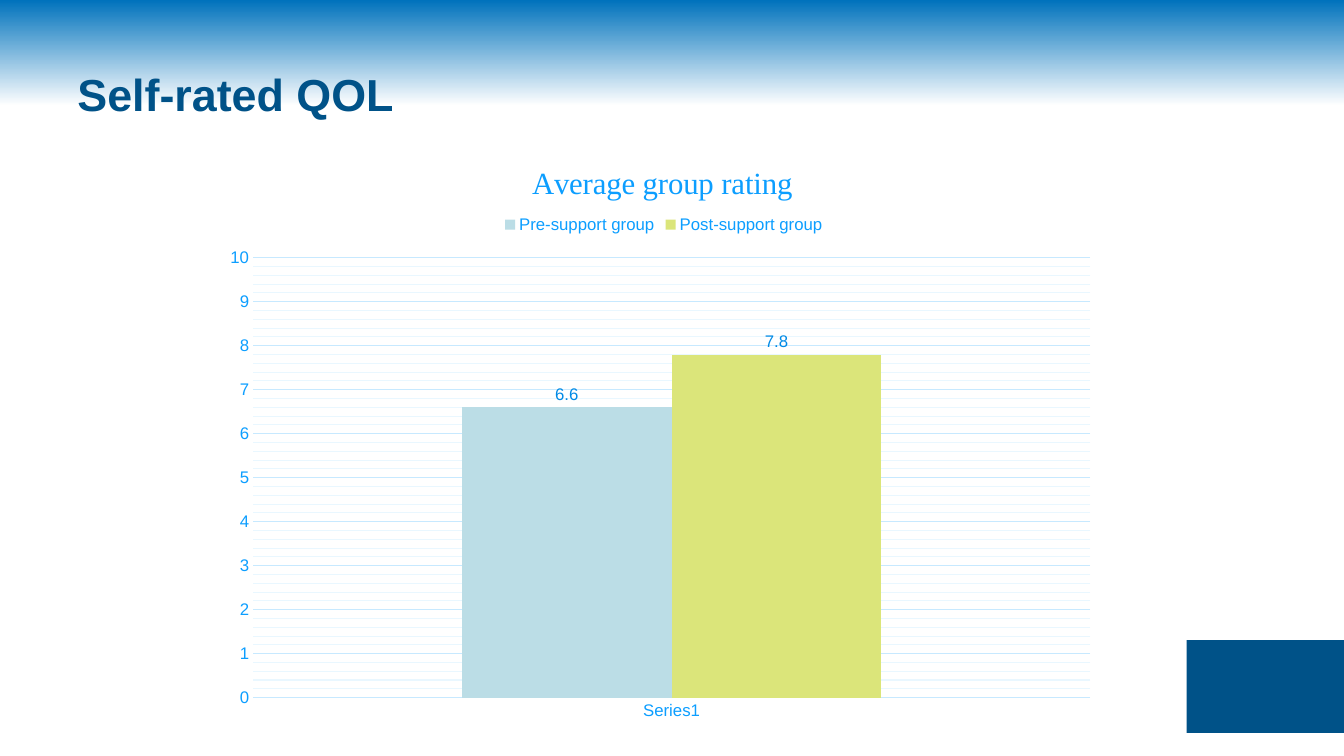
from lxml import etree
from pptx import Presentation
from pptx.chart.data import CategoryChartData
from pptx.dml.color import RGBColor
from pptx.enum.chart import XL_CHART_TYPE as ChartType, XL_LABEL_POSITION as LabelPosition
from pptx.enum.chart import XL_LEGEND_POSITION as LegendPosition, XL_TICK_MARK as TickMark
from pptx.enum.shapes import MSO_SHAPE as Shape
from pptx.enum.text import MSO_ANCHOR as Anchor
from pptx.oxml.ns import qn
from pptx.util import Inches, Pt

COLORS = {"navy": "005288", "sky": "0072BC", "white": "FFFFFF", "axis": "0C9EFF",
          "label": "008AE6", "grid": "C7E9FF", "minor": "E9F7FF",
          "pre": "BBDDE6", "post": "DBE57A"}
HEADING = "Self-rated QOL"
CHART_TITLE = "Average group rating"
CATEGORY = "Series1"
RATINGS = [("Pre-support group", 6.6, "pre"), ("Post-support group", 7.8, "post")]
GRADIENT = [(0, "sky"), (0.14, "white")]
BOXES = {"corner": (11.77, 6.35, 1.56, 0.92), "heading": (0.67, 0.3, 12, 1.25),
         "chart": (2.11, 1.33, 8.89, 5.93)}
FONTS = {"heading": {"name": "Arial", "size": Pt(32), "bold": True},
         "title": {"name": "Times New Roman", "size": Pt(22), "bold": False},
         "body": {"name": "Arial", "size": Pt(12), "bold": False}}
VALUE_AXIS = {"minimum_scale": 0, "maximum_scale": 10, "major_unit": 1, "minor_unit": 0.2,
              "has_major_gridlines": True, "has_minor_gridlines": True}
PLOT_AREA = {"x": 0.045, "y": 0.207, "w": 0.934, "h": 0.736}
TITLE_SPOT = {"x": 0.35, "y": 0.04}
LEGEND_SPOT = {"x": 0.32, "y": 0.13}


def color(name):
    """Return the named colour."""
    return RGBColor.from_string(COLORS[name])


def place(name):
    """Return the left, top, width and height of a named box."""
    return [Inches(length) for length in BOXES[name]]


def apply(target, values):
    """Set every attribute in a dict of format values."""
    for key, value in values.items():
        setattr(target, key, value)


def style(font, kind, shade):
    """Give a font its format and colour."""
    apply(font, FONTS[kind])
    font.color.rgb = color(shade)


def rule(line, shade):
    """Give a chart line its colour and width."""
    line.color.rgb = color(shade)
    line.width = Pt(0.75)


def set_layout(element, spot, before, inner=False):
    """Fix the place of a chart part ahead of the first of the given tags."""
    for old in element.findall(qn("c:layout")):
        element.remove(old)
    layout = etree.Element(qn("c:layout"))
    manual = etree.SubElement(layout, qn("c:manualLayout"))
    values = {"layoutTarget": "inner"} if inner else {}
    values.update({f"{key}Mode": "edge" for key in ("x", "y")})
    values.update(spot)
    for tag, value in values.items():
        etree.SubElement(manual, qn(f"c:{tag}")).set("val", str(value))
    follower = next(child for child in element if child.tag in [qn(tag) for tag in before])
    follower.addprevious(layout)


def add_background(page):
    """Fade the top of the page from blue to white."""
    fill = page.background.fill
    fill.gradient()
    fill.gradient_angle = 270
    for stop, (position, shade) in zip(fill.gradient_stops, GRADIENT):
        stop.position = position
        stop.color.rgb = color(shade)


def add_corner(page):
    """Add the dark block at the lower right."""
    block = page.shapes.add_shape(Shape.RECTANGLE, *place("corner"))
    block.shadow.inherit = False
    block.fill.solid()
    block.fill.fore_color.rgb = color("navy")
    block.line.fill.background()


def add_heading(page):
    """Add the page heading."""
    frame = page.shapes.add_textbox(*place("heading")).text_frame
    apply(frame, {"word_wrap": True, "vertical_anchor": Anchor.MIDDLE})
    span = frame.paragraphs[0].add_run()
    span.text = HEADING
    style(span.font, "heading", "navy")


def add_ratings(page):
    """Add the column chart of ratings."""
    data = CategoryChartData()
    data.categories = [CATEGORY]
    for name, value, _ in RATINGS:
        data.add_series(name, [value])
    chart = page.shapes.add_chart(ChartType.COLUMN_CLUSTERED, *place("chart"), data).chart
    style(chart.font, "body", "axis")
    title = chart.chart_title
    span = title.text_frame.paragraphs[0].add_run()
    span.text = CHART_TITLE
    style(span.font, "title", "axis")
    title.include_in_layout = False
    chart.has_legend = True
    apply(chart.legend, {"position": LegendPosition.TOP, "include_in_layout": False})
    style(chart.legend.font, "body", "axis")

    plot = chart.plots[0]
    apply(plot, {"gap_width": 199, "overlap": 0, "vary_by_categories": False})
    for series, (_, _, shade) in zip(plot.series, RATINGS):
        series.format.fill.solid()
        series.format.fill.fore_color.rgb = color(shade)
        labels = series.data_labels
        apply(labels, {"show_value": True, "position": LabelPosition.OUTSIDE_END})
        style(labels.font, "body", "label")

    for axis in (chart.category_axis, chart.value_axis):
        apply(axis, {"major_tick_mark": TickMark.NONE, "minor_tick_mark": TickMark.NONE})
        style(axis.tick_labels.font, "body", "axis")
    rule(chart.category_axis.format.line, "grid")
    ratings = chart.value_axis
    apply(ratings, VALUE_AXIS)
    ratings.format.line.fill.background()
    rule(ratings.major_gridlines.format.line, "grid")
    minor = ratings._element.find(qn("c:minorGridlines"))
    shape = etree.SubElement(minor, qn("c:spPr"))
    line = etree.SubElement(shape, qn("a:ln"), w=str(Pt(0.75)))
    fill = etree.SubElement(line, qn("a:solidFill"))
    etree.SubElement(fill, qn("a:srgbClr"), val=COLORS["minor"])

    set_layout(title._element, TITLE_SPOT, ["c:overlay"])
    set_layout(chart.legend._element, LEGEND_SPOT, ["c:overlay"])
    area = chart._chartSpace.chart.plotArea
    set_layout(area, PLOT_AREA, ["c:barChart"], inner=True)


def main():
    """Build the slide and save it."""
    deck = Presentation()
    apply(deck, {"slide_width": Inches(13.33), "slide_height": Inches(7.5)})
    page = deck.slides.add_slide(deck.slide_layouts[6])
    for add_part in (add_background, add_corner, add_heading, add_ratings):
        add_part(page)
    deck.save("out.pptx")


if __name__ == "__main__":
    main()
